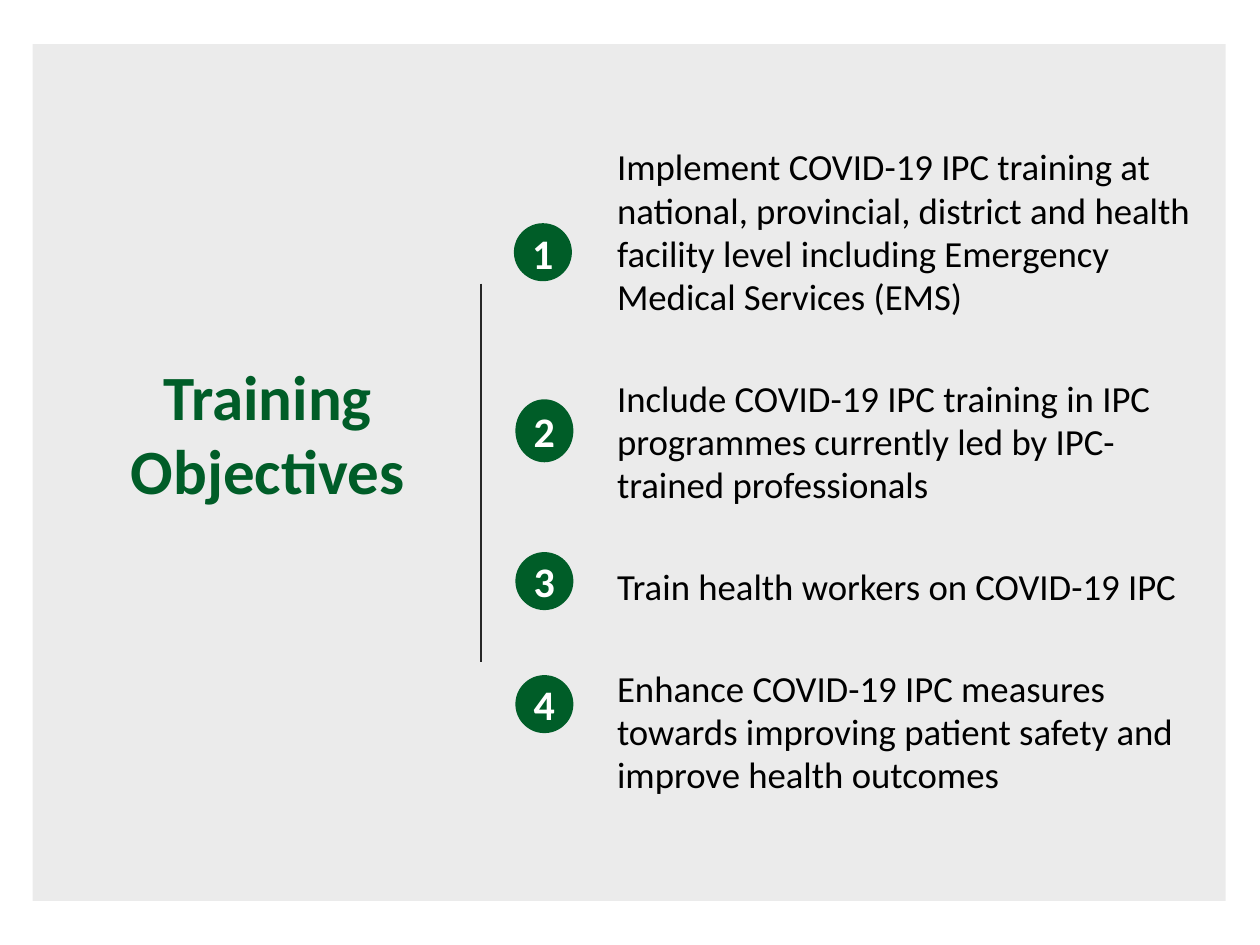
from lxml import etree
from pptx import Presentation
from pptx.dml.color import RGBColor
from pptx.enum.shapes import MSO_CONNECTOR, MSO_SHAPE
from pptx.enum.text import MSO_ANCHOR, MSO_AUTO_SIZE, PP_ALIGN
from pptx.oxml.ns import qn
from pptx.util import Cm, Pt

RECTANGLE, OVAL = MSO_SHAPE.RECTANGLE, MSO_SHAPE.OVAL
LEFT, CENTER = PP_ALIGN.LEFT, PP_ALIGN.CENTER
MIDDLE = MSO_ANCHOR.MIDDLE
GREEN, BLACK, WHITE, CHARCOAL = "005D28", "000000", "FFFFFF", "262626"

TITLE = "Training Objectives"
# (objective, left, top and height of its numbered badge in cm)
OBJECTIVES = [
    ("Implement COVID-19 IPC training at national, provincial, district and "
     "health facility level including Emergency Medical Services (EMS)",
     10.36, 4.5, 1.17),
    ("Include COVID-19 IPC training in IPC programmes currently led by "
     "IPC-trained professionals", 10.39, 8.05, 1.27),
    ("Train health workers on COVID-19 IPC", 10.39, 11.13, 1.17),
    ("Enhance COVID-19 IPC measures towards improving patient safety and "
     "improve health outcomes", 10.39, 13.61, 1.17),
]
BADGE_WIDTH = 1.17
TEXT_TOP, TEXT_HEIGHT = 2.67, 13.69


def rgb(hex_color):
    return RGBColor.from_string(hex_color)


def write(frame, paragraphs, size, color, bold=False, align=LEFT, gap=0,
          spacing=1.0):
    """Fill a text frame, with gap points between its paragraphs."""
    frame.word_wrap = True
    frame.auto_size = MSO_AUTO_SIZE.NONE
    frame.vertical_anchor = MIDDLE
    for index, text in enumerate(paragraphs):
        paragraph = frame.add_paragraph() if index else frame.paragraphs[0]
        paragraph.alignment = align
        paragraph.line_spacing = spacing
        paragraph.space_before = Pt(gap if index else 0)
        run = paragraph.add_run()
        run.text = text
        run.font.name = "Calibri"
        run.font.size = Pt(size)
        run.font.bold = bold
        run.font.color.rgb = rgb(color)


def add_filled(slide, kind, left, top, width, height, color):
    shape = slide.shapes.add_shape(kind, Cm(left), Cm(top), Cm(width), Cm(height))
    shape.shadow.inherit = False
    shape.fill.solid()
    shape.fill.fore_color.rgb = rgb(color)
    shape.line.fill.background()
    return shape


def add_panel(slide):
    panel = add_filled(slide, RECTANGLE, 0.66, 0.89, 24.05, 17.27, BLACK)
    color = panel.fill._xPr.find(qn("a:solidFill"))[0]
    etree.SubElement(color, qn("a:alpha"), val="8000")
    # The panel lies behind the title placeholder.
    slide.shapes._spTree.insert(2, panel._element)


def add_title(slide):
    title = slide.shapes.title
    title.left, title.top = Cm(1.75), Cm(TEXT_TOP)
    title.width, title.height = Cm(7.29), Cm(TEXT_HEIGHT)
    title.text_frame.margin_bottom = Cm(1.6)
    write(title.text_frame, [TITLE], 36, GREEN, bold=True, align=CENTER,
          spacing=0.98)


def add_divider(slide):
    divider = slide.shapes.add_connector(
        MSO_CONNECTOR.STRAIGHT, Cm(9.7), Cm(5.72), Cm(9.7), Cm(13.34))
    divider.line.color.rgb = rgb(CHARCOAL)
    divider.line.width = Pt(1.5)
    etree.SubElement(divider._element.spPr, qn("a:effectLst"))


def add_objectives(slide):
    box = slide.shapes.add_textbox(
        Cm(12.19), Cm(TEXT_TOP), Cm(12.29), Cm(TEXT_HEIGHT))
    write(box.text_frame, [item[0] for item in OBJECTIVES], 21, BLACK,
          gap=33.5, spacing=0.98)

    for number, (_, left, top, height) in enumerate(OBJECTIVES, start=1):
        badge = add_filled(slide, OVAL, left, top, BADGE_WIDTH, height, GREEN)
        frame = badge.text_frame
        frame.margin_left = frame.margin_right = 0
        frame.margin_top = frame.margin_bottom = 0
        write(frame, [str(number)], 24, WHITE, bold=True, align=CENTER)


def main():
    deck = Presentation()
    deck.slide_width, deck.slide_height = Cm(25.4), Cm(19.05)
    slide = deck.slides.add_slide(deck.slide_layouts[5])
    add_panel(slide)
    add_title(slide)
    add_divider(slide)
    add_objectives(slide)
    deck.save("out.pptx")


if __name__ == "__main__":
    main()
